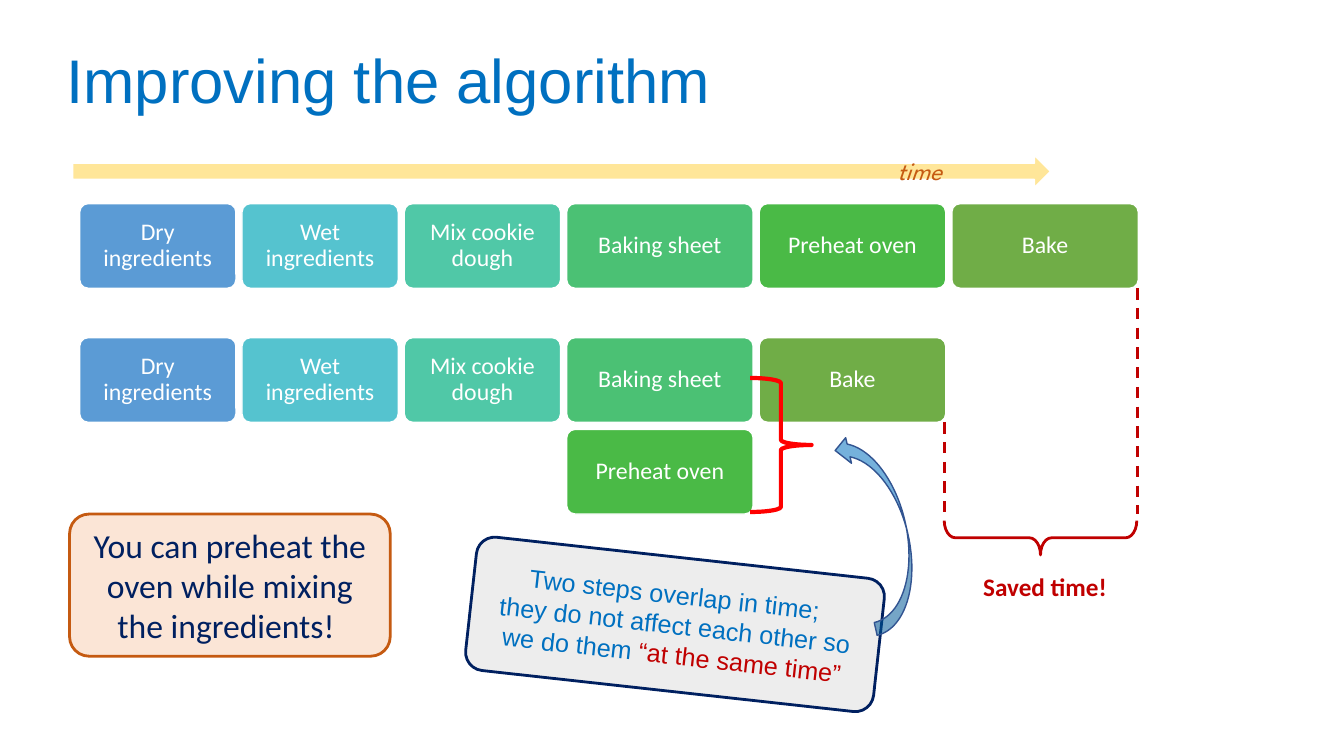
from pptx import Presentation
from pptx.dml.color import RGBColor
from pptx.enum.dml import MSO_LINE
from pptx.enum.shapes import MSO_CONNECTOR, MSO_SHAPE
from pptx.enum.text import MSO_ANCHOR, PP_ALIGN
from pptx.oxml.ns import qn
from pptx.util import Inches, Pt
from lxml import etree

COLORS = {
    "Dry ingredients": "5B9BD5", "Wet ingredients": "55C3CF",
    "Mix cookie dough": "50C8A7", "Baking sheet": "4BC174",
    "Preheat oven": "4ABA46", "Bake": "70AD47",
    "white": "FFFFFF", "blue": "0070C0", "navy": "002060", "dark red": "C00000",
    "red": "FF0000", "orange": "C55A11", "peach": "FBE5D6", "gray": "EDEDED",
    "sand": "FFE699", "arrow edge": "325491",
}


def rgb(name):
    return RGBColor.from_string(COLORS[name])


def draw(kind, x, y, w, h, fill, line, width):
    sp = s.shapes.add_shape(kind, Inches(x), Inches(y), Inches(w), Inches(h))
    sp.shadow.inherit = False
    if fill:
        sp.fill.solid()
        sp.fill.fore_color.rgb = rgb(fill)
    else:
        sp.fill.background()
    sp.line.color.rgb = rgb(line)
    sp.line.width = Pt(width)
    return sp


prs = Presentation()
prs.slide_width, prs.slide_height = Inches(13.33), Inches(7.5)
s = prs.slides.add_slide(prs.slide_layouts[5])

title = s.shapes.title
title.left, title.top = Inches(0.56), Inches(0.4)
title.width, title.height = Inches(11.85), Inches(0.85)
title.text_frame.text = "Improving the algorithm"
title.text_frame.vertical_anchor = MSO_ANCHOR.MIDDLE
p = title.text_frame.paragraphs[0]
p.alignment = PP_ALIGN.LEFT
p.line_spacing = 0.9
p.font.size, p.font.name = Pt(44), "Arial"
p.font.color.rgb = rgb("blue")

# Steps: three narrow columns, then three wide ones
NARROW, WIDE, GAP, STEP_H = 1.61, 1.91, 0.06, 0.84
LEFT, ROWS = 0.79, (2.02, 3.35, 4.26)
pitches = [NARROW] * 3 + [WIDE] * 3
lefts = [LEFT + sum(pitches[:i]) for i in range(6)]
steps = ["Dry ingredients", "Wet ingredients", "Mix cookie dough",
         "Baking sheet", "Preheat oven", "Bake"]
before = [(step, col, 0) for col, step in enumerate(steps)]
after = [(step, col, 1) for col, step in enumerate(steps[:4] + ["Bake"])]
for step, col, row in before + after + [("Preheat oven", 3, 2)]:
    sp = draw(MSO_SHAPE.ROUNDED_RECTANGLE, lefts[col], ROWS[row],
              pitches[col] - GAP, STEP_H, step, "white", 1)
    sp.adjustments[0] = 0.1
    tf = sp.text_frame
    tf.margin_left = tf.margin_right = tf.margin_top = tf.margin_bottom = Inches(0.15)
    tf.text = step
    p = tf.paragraphs[0]
    p.alignment = PP_ALIGN.CENTER
    p.line_spacing = 0.9
    p.font.size, p.font.name = Pt(17), "Calibri"
    p.font.color.rgb = rgb("white")

# Time axis
draw(MSO_SHAPE.RIGHT_ARROW, 0.72, 1.54, 9.7, 0.32, "sand", "white", 1)

# Saved time: dashed ends of both schedules, joined by a brace
for x, row in ((11.28, 0), (9.37, 1)):
    ln = s.shapes.add_connector(MSO_CONNECTOR.STRAIGHT, Inches(x),
                                Inches(ROWS[row] + STEP_H), Inches(x), Inches(5.1))
    ln.line.color.rgb = rgb("dark red")
    ln.line.width = Pt(2)
    ln.line.dash_style = MSO_LINE.DASH
    etree.SubElement(ln.element.spPr, qn("a:effectLst"))
brace = draw(MSO_SHAPE.LEFT_BRACE, 10.15, 4.38, 0.34, WIDE, None, "dark red", 2)
brace.rotation = 270
brace.adjustments[0] = 0.323

# Callouts
BLUE_LINES = [[("Two steps overlap in time; ", "blue")],
              [("they do not affect each other so we do them ", "blue"),
               ("“at the same time”", "dark red")]]
NAVY_LINES = [[("You can preheat the oven while mixing the ingredients! ", "navy")]]
for box, fill, line, angle, lines, size, font in (
    ((0.69, 5.1, 3.18, 1.41), "peach", "orange", 0, NAVY_LINES, 24, "Calibri"),
    ((4.66, 5.53, 4.07, 1.33), "gray", "navy", 6.3, BLUE_LINES, 18, "Arial"),
):
    sp = draw(MSO_SHAPE.ROUNDED_RECTANGLE, *box, fill, line, 2)
    sp.adjustments[0] = 0.137
    sp.rotation = angle
    tf = sp.text_frame
    for i, runs in enumerate(lines):
        p = tf.add_paragraph() if i else tf.paragraphs[0]
        p.alignment = PP_ALIGN.CENTER
        p.font.size, p.font.name = Pt(size), font
        for text, color in runs:
            r = p.add_run()
            r.text = text
            r.font.color.rgb = rgb(color)

# Overlap brace and the curved arrow pointing at it
draw(MSO_SHAPE.RIGHT_BRACE, 7.44, 3.75, 0.61, 1.33, None, "red", 3)
arrow = draw(MSO_SHAPE.CURVED_LEFT_ARROW, 8.47, 4.26, 0.52, 2.01, "blue", "arrow edge", 1)
arrow.rotation = 167.2
arrow.element.spPr.find(qn("a:xfrm")).set("flipH", "1")
fill_color = arrow.element.spPr.find(qn("a:solidFill"))[0]
etree.SubElement(fill_color, qn("a:alpha"), val="54000")

# Labels
for text, x, y, w, align, font, color, bold, italic in (
    ("Saved time!", 9.43, 5.62, 1.87, PP_ALIGN.CENTER, "Calibri", "dark red", True, False),
    ("time", 8.8, 1.49, 0.94, PP_ALIGN.LEFT, "League Spartan", "orange", False, True),
):
    tf = s.shapes.add_textbox(Inches(x), Inches(y), Inches(w), Inches(0.4)).text_frame
    tf.word_wrap = True
    tf.text = text
    p = tf.paragraphs[0]
    p.alignment = align
    p.font.size, p.font.name = Pt(18), font
    p.font.bold, p.font.italic = bold, italic
    p.font.color.rgb = rgb(color)

prs.save("out.pptx")
